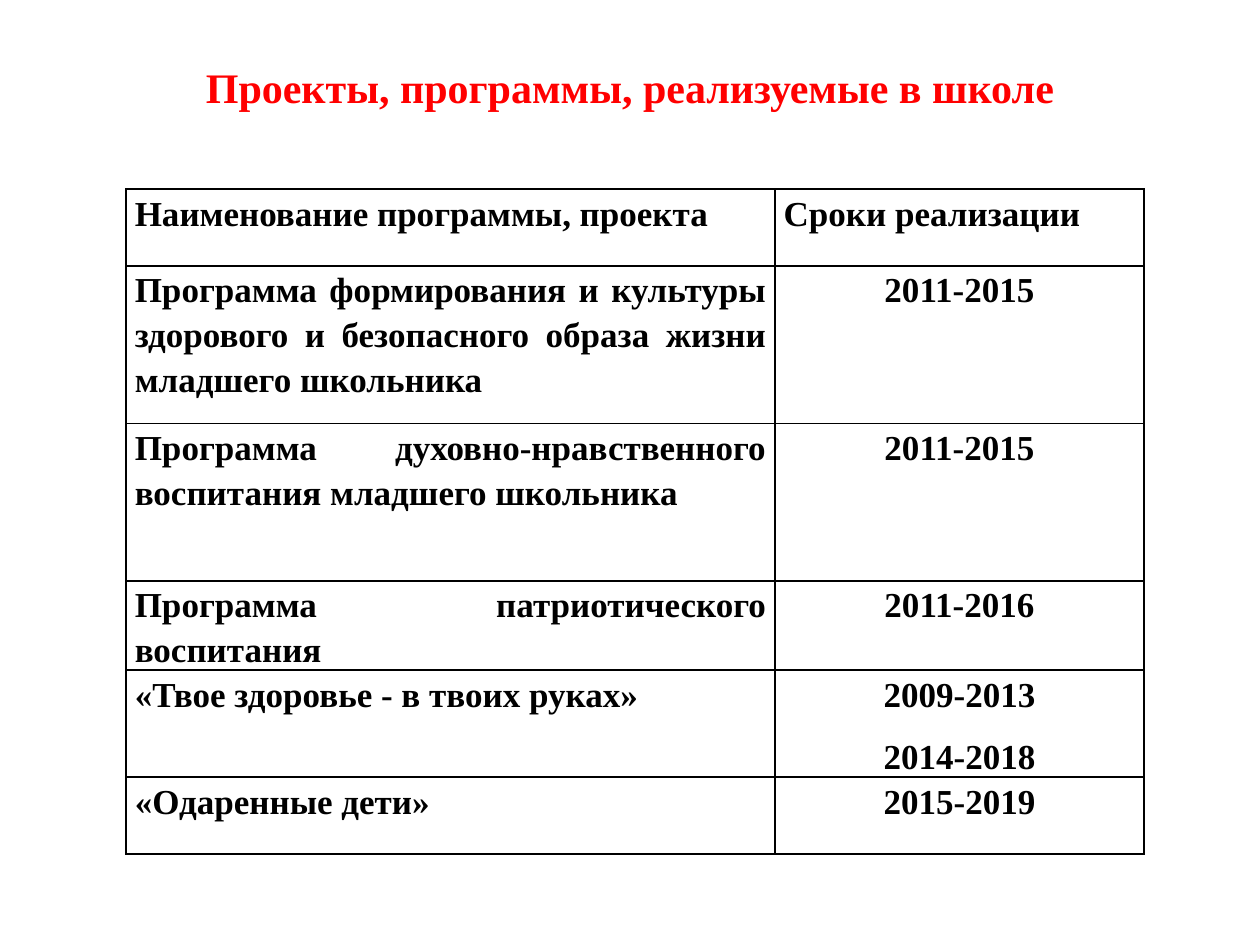
from lxml import etree
from pptx import Presentation
from pptx.dml.color import RGBColor
from pptx.enum.text import MSO_ANCHOR, PP_ALIGN
from pptx.oxml.ns import qn
from pptx.util import Inches, Pt

CENTER, JUSTIFY = PP_ALIGN.CENTER, PP_ALIGN.JUSTIFY
MIDDLE = MSO_ANCHOR.MIDDLE

# Content
TITLE = "Проекты, программы, реализуемые в школе"
HEADER = ("Наименование программы, проекта", ["Сроки реализации"])
PROGRAMS = [
    ("Программа формирования и культуры здорового и безопасного образа жизни "
     "младшего школьника", ["2011-2015"]),
    ("Программа духовно-нравственного воспитания младшего школьника", ["2011-2015"]),
    ("Программа патриотического воспитания", ["2011-2016"]),
    ("«Твое здоровье - в твоих руках»", ["2009-2013", "2014-2018"]),
    ("«Одаренные дети»", ["2015-2019"]),
]

# Style
FONT = "Times New Roman"
COLORS = {"title": "FF0000", "text": "000000", "border": "000000"}
COLUMN_WIDTHS = [5.15, 2.93]
ROW_HEIGHTS = [0.61, 1.25, 1.25, 0.61, 0.83, 0.61]


def style_paragraph(paragraph, size, color, alignment):
    paragraph.alignment = alignment
    font = paragraph.font
    font.name, font.size, font.bold = FONT, Pt(size), True
    font.color.rgb = RGBColor.from_string(COLORS[color])


def add_borders(cell):
    properties = cell._tc.get_or_add_tcPr()
    for side in ("a:lnL", "a:lnR", "a:lnT", "a:lnB"):
        line = etree.SubElement(properties, qn(side), w=str(Pt(1)))
        fill = etree.SubElement(line, qn("a:solidFill"))
        etree.SubElement(fill, qn("a:srgbClr"), val=COLORS["border"])


def fill_cell(cell, lines, alignment):
    cell.margin_left = cell.margin_right = Inches(0.07)
    cell.margin_top = cell.margin_bottom = 0
    add_borders(cell)
    cell.fill.background()
    cell.text = "\n".join(lines)
    for paragraph in cell.text_frame.paragraphs:
        style_paragraph(paragraph, 20, "text", alignment)
        paragraph.line_spacing = 1.15
        paragraph.space_after = Pt(10)


prs = Presentation()
prs.slide_width, prs.slide_height = Inches(10), Inches(7.5)
slide = prs.slides.add_slide(prs.slide_layouts[5])

# Title
title = slide.shapes.title
title.left, title.top = Inches(0.5), Inches(0.3)
title.width, title.height = Inches(9), Inches(0.78)
title.text_frame.text = TITLE
title.text_frame.vertical_anchor = MIDDLE
style_paragraph(title.text_frame.paragraphs[0], 24, "title", CENTER)

# Table of programs and their years
rows = [HEADER] + PROGRAMS
programs_table = slide.shapes.add_table(
    len(rows), len(COLUMN_WIDTHS), Inches(1), Inches(1.5),
    Inches(sum(COLUMN_WIDTHS)), Inches(sum(ROW_HEIGHTS))).table
for column, width in zip(programs_table.columns, COLUMN_WIDTHS):
    column.width = Inches(width)
for row, height in zip(programs_table.rows, ROW_HEIGHTS):
    row.height = Inches(height)
for index, (program, years) in enumerate(rows):
    fill_cell(programs_table.cell(index, 0), [program], JUSTIFY)
    fill_cell(programs_table.cell(index, 1), years, CENTER if index else JUSTIFY)

prs.save("out.pptx")
